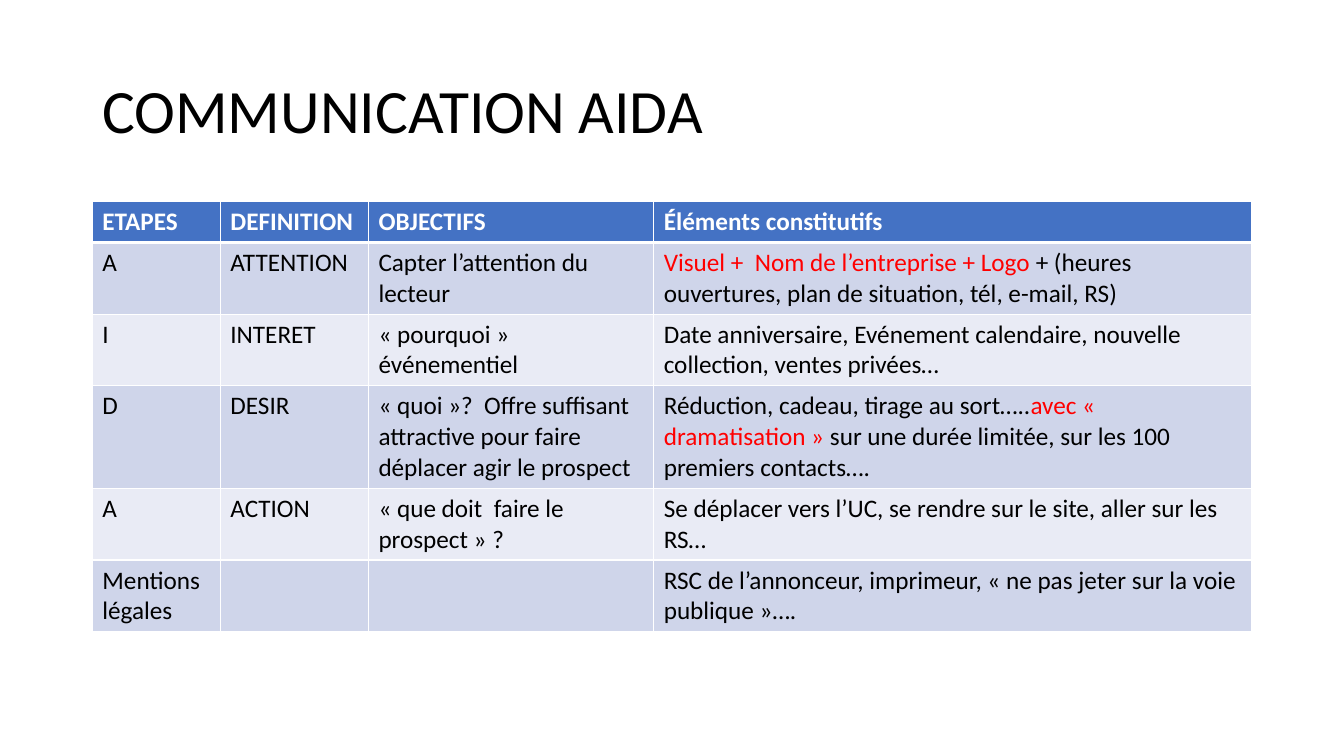
from lxml import etree
from pptx import Presentation
from pptx.dml.color import RGBColor
from pptx.enum.text import MSO_ANCHOR
from pptx.oxml.ns import qn
from pptx.util import Pt

MIDDLE = MSO_ANCHOR.MIDDLE
FONT = "Calibri"
BLACK = RGBColor(0x00, 0x00, 0x00)
WHITE = RGBColor(0xFF, 0xFF, 0xFF)
RED = RGBColor(0xFF, 0x00, 0x00)
HEADER_BLUE = RGBColor(0x44, 0x72, 0xC4)
BAND_DARK = RGBColor(0xCF, 0xD5, 0xEA)
BAND_LIGHT = RGBColor(0xE9, 0xEB, 0xF5)

BODY_SIZE = 18
LINE_HEIGHT = 22
CELL_PADDING = 7.2
COLUMN_WIDTHS = [91.4, 105.8, 203.8, 427]

HEADINGS = ["ETAPES", "DEFINITION", "OBJECTIFS", "Éléments constitutifs"]
# Each step: number of text lines, then its cells; a list holds (text, colour) parts
STEPS = [
    (2, ["A", "ATTENTION", "Capter l’attention du lecteur",
         [("Visuel +  Nom de l’entreprise + Logo ", RED),
          ("+ (heures ouvertures, plan de situation, tél, e-mail, RS)", BLACK)]]),
    (2, ["I", "INTERET", "« pourquoi » événementiel",
         "Date anniversaire, Evénement calendaire, nouvelle collection, ventes privées…"]),
    (3, ["D", "DESIR",
         "« quoi »?  Offre suffisant attractive pour faire déplacer agir le prospect",
         [("Réduction, cadeau, tirage au sort…..", BLACK),
          ("avec « dramatisation »", RED),
          (" sur une durée limitée, sur les 100 premiers contacts….", BLACK)]]),
    (2, ["A", "ACTION", "« que doit  faire le prospect » ?",
         "Se déplacer vers l’UC, se rendre sur le site, aller sur les RS…"]),
    (2, ["Mentions légales", "", "",
         "RSC de l’annonceur, imprimeur, « ne pas jeter sur la voie publique »…."]),
]


def format_run(run, size, color, bold=False):
    run.font.name = FONT
    run.font.size = Pt(size)
    run.font.bold = bold
    run.font.color.rgb = color


def set_borders(cell, top, bottom):
    properties = cell._tc.get_or_add_tcPr()
    for side, width in (("L", 1), ("R", 1), ("T", top), ("B", bottom)):
        border = etree.SubElement(properties, qn(f"a:ln{side}"), w=str(Pt(width)))
        fill = etree.SubElement(border, qn("a:solidFill"))
        etree.SubElement(fill, qn("a:srgbClr"), val=str(WHITE))


def add_title(slide, left, top, width, height):
    title = slide.shapes.add_textbox(Pt(left), Pt(top), Pt(width), Pt(height))
    frame = title.text_frame
    frame.word_wrap = True
    frame.vertical_anchor = MIDDLE
    frame.text = "COMMUNICATION AIDA"
    frame.paragraphs[0].line_spacing = 0.9
    format_run(frame.paragraphs[0].runs[0], 44, BLACK)


def add_aida_table(slide, left, top, width):
    rows = [(1, HEADINGS)] + STEPS
    heights = [CELL_PADDING + LINE_HEIGHT * lines for lines, _ in rows]
    table = slide.shapes.add_table(len(rows), len(HEADINGS), Pt(left), Pt(top),
                                   Pt(width), Pt(sum(heights))).table
    for column, share in zip(table.columns, COLUMN_WIDTHS):
        column.width = Pt(width * share / sum(COLUMN_WIDTHS))

    for r, (_, contents) in enumerate(rows):
        table.rows[r].height = Pt(heights[r])
        is_header = r == 0
        band = HEADER_BLUE if is_header else BAND_DARK if r % 2 else BAND_LIGHT
        for c, content in enumerate(contents):
            cell = table.cell(r, c)
            # A thicker rule separates the header from the steps
            set_borders(cell, top=3 if r == 1 else 1, bottom=3 if is_header else 1)
            cell.fill.solid()
            cell.fill.fore_color.rgb = band
            paragraph = cell.text_frame.paragraphs[0]
            paragraph.font.size = Pt(BODY_SIZE)
            if isinstance(content, str):
                content = [(content, WHITE if is_header else BLACK)]
            for text, color in content:
                if text:
                    run = paragraph.add_run()
                    run.text = text
                    format_run(run, BODY_SIZE, color, is_header)


def main():
    presentation = Presentation()
    presentation.slide_width = Pt(960)
    presentation.slide_height = Pt(540)
    slide = presentation.slides.add_slide(presentation.slide_layouts[6])
    add_title(slide, 66, 28.8, 828, 104.4)
    add_aida_table(slide, 66, 144, 828)
    presentation.save("out.pptx")


if __name__ == "__main__":
    main()
